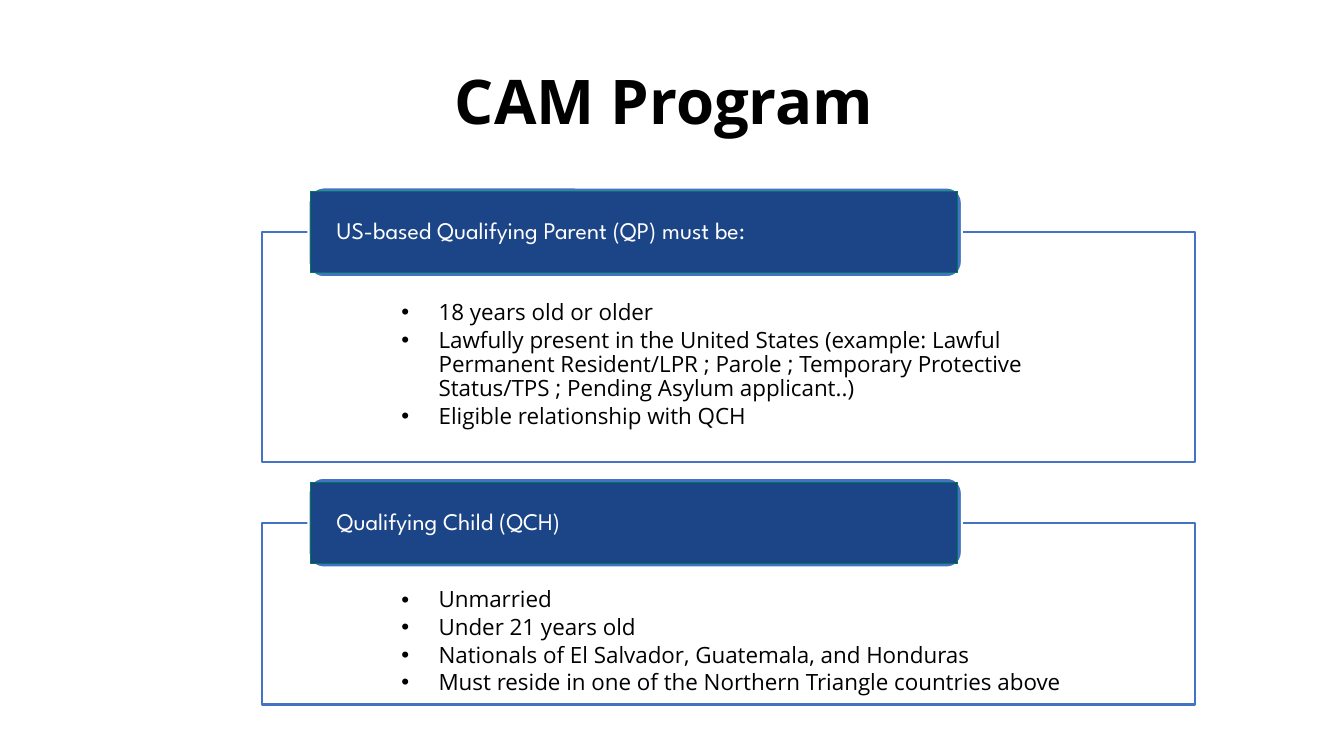
"""Build the CAM Program slide with its two requirement panels."""
from dataclasses import dataclass

import lxml.etree
import pptx
import pptx.dml.color
import pptx.enum.shapes
import pptx.enum.text
import pptx.oxml.ns
import pptx.util

Inches = pptx.util.Inches
Pt = pptx.util.Pt
ShapeKind = pptx.enum.shapes.MSO_SHAPE
Anchor = pptx.enum.text.MSO_ANCHOR
Align = pptx.enum.text.PP_ALIGN
qn = pptx.oxml.ns.qn

COLORS = {"white": "FFFFFF", "black": "000000", "blue": "4472C4",
          "navy": "1C4587", "green": "00765A"}
BODY_FONT = "Open Sans"
HEADING_FONT = "League Spartan"


@dataclass(frozen=True)
class Bullet:
    text: str
    space_before: float = 2.5
    line_spacing: float = 0.9


@dataclass(frozen=True)
class Panel:
    heading: str
    top: float
    height: float
    text_height: float
    text_inset: float
    tab_top: float
    label_top: float
    bullets: tuple[Bullet, ...]


PANELS = (
    Panel("US-based Qualifying Parent (QP) must be:", 2.3, 2.28, 1.88, 0.69, 1.86, 1.9, (
        Bullet("18 years old or older", 0),
        Bullet("Lawfully present in the United States (example: Lawful Permanent "
               "Resident/LPR ; Parole ; Temporary Protective Status/TPS ; "
               "Pending Asylum applicant..)"),
        Bullet("Eligible relationship with QCH"),
    )),
    Panel("Qualifying Child (QCH)", 5.19, 1.8, 2.3, 0.65, 4.74, 4.79, (
        Bullet("Unmarried", 0),
        Bullet("Under 21 years old"),
        Bullet("Nationals of El Salvador, Guatemala, and Honduras"),
        Bullet("Must reside in one of the Northern Triangle countries above", 0, 1.0),
    )),
)


def color(name: str) -> pptx.dml.color.RGBColor:
    return pptx.dml.color.RGBColor.from_string(COLORS[name])


def add_box(page, kind, left: float, top: float, width: float, height: float,
            fill: str, line: str, weight: float):
    box = page.shapes.add_shape(kind, Inches(left), Inches(top), Inches(width), Inches(height))
    box.shadow.inherit = False
    box.fill.solid()
    box.fill.fore_color.rgb = color(fill)
    box.line.color.rgb = color(line)
    box.line.width = Pt(weight)
    return box


def add_text_box(page, left: float, top: float, width: float, height: float):
    return page.shapes.add_textbox(Inches(left), Inches(top), Inches(width), Inches(height))


def set_frame(box, left: float, top: float, right: float, bottom: float, anchor) -> None:
    frame = box.text_frame
    frame.word_wrap = True
    frame.vertical_anchor = anchor
    frame.margin_left, frame.margin_top = Inches(left), Inches(top)
    frame.margin_right, frame.margin_bottom = Inches(right), Inches(bottom)


def write(para, text: str, size: float, font: str, ink: str,
          bold: bool = False, align=Align.LEFT, line_spacing: float = 0.9) -> None:
    para.alignment = align
    para.line_spacing = line_spacing
    span = para.add_run()
    span.text = text
    span.font.size = Pt(size)
    span.font.name = font
    span.font.bold = bold
    span.font.color.rgb = color(ink)


def set_bullet(para) -> None:
    properties = para._p.get_or_add_pPr()
    properties.set("marL", str(Inches(1)))
    properties.set("indent", str(Inches(-0.37)))
    tint = lxml.etree.SubElement(properties, qn("a:buClr"))
    lxml.etree.SubElement(tint, qn("a:srgbClr"), val=COLORS["black"])
    lxml.etree.SubElement(properties, qn("a:buFont"), typeface="Arial")
    lxml.etree.SubElement(properties, qn("a:buChar"), char="•")


def add_panel(page, panel: Panel) -> None:
    border = add_box(page, ShapeKind.RECTANGLE, 2.6, panel.top, 9.25, panel.height,
                     "white", "blue", 1.5)
    tint = border.fill._xPr.find(qn("a:solidFill"))[0]
    lxml.etree.SubElement(tint, qn("a:alpha"), val="89000")

    body = add_text_box(page, 2.6, panel.top, 9.25, panel.text_height)
    set_frame(body, 0.75, panel.text_inset, 0.75, 0.13, Anchor.TOP)
    for index, bullet in enumerate(panel.bullets):
        frame = body.text_frame
        para = frame.add_paragraph() if index else frame.paragraphs[0]
        write(para, bullet.text, 16, BODY_FONT, "black", line_spacing=bullet.line_spacing)
        para.space_before = Pt(bullet.space_before)
        para.level = 1
        set_bullet(para)

    add_box(page, ShapeKind.ROUNDED_RECTANGLE, 3.06, panel.tab_top, 6.48, 0.89,
            "blue", "white", 1.5)
    label = add_box(page, ShapeKind.RECTANGLE, 3.08, panel.label_top, 6.42, 0.8,
                    "navy", "green", 0.75)
    set_frame(label, 0.26, 0, 0.26, 0, Anchor.MIDDLE)
    write(label.text_frame.paragraphs[0], panel.heading, 17, HEADING_FONT, "white")


def main() -> None:
    deck = pptx.Presentation()
    deck.slide_width, deck.slide_height = Inches(13.33), Inches(7.5)
    page = deck.slides.add_slide(deck.slide_layouts[6])
    title = add_text_box(page, 0.84, 0.31, 11.5, 1.45)
    set_frame(title, 0.1, 0.05, 0.1, 0.05, Anchor.MIDDLE)
    write(title.text_frame.paragraphs[0], "CAM Program", 44, BODY_FONT, "black",
          bold=True, align=Align.CENTER)
    for panel in PANELS:
        add_panel(page, panel)
    deck.save("out.pptx")


if __name__ == "__main__":
    main()
